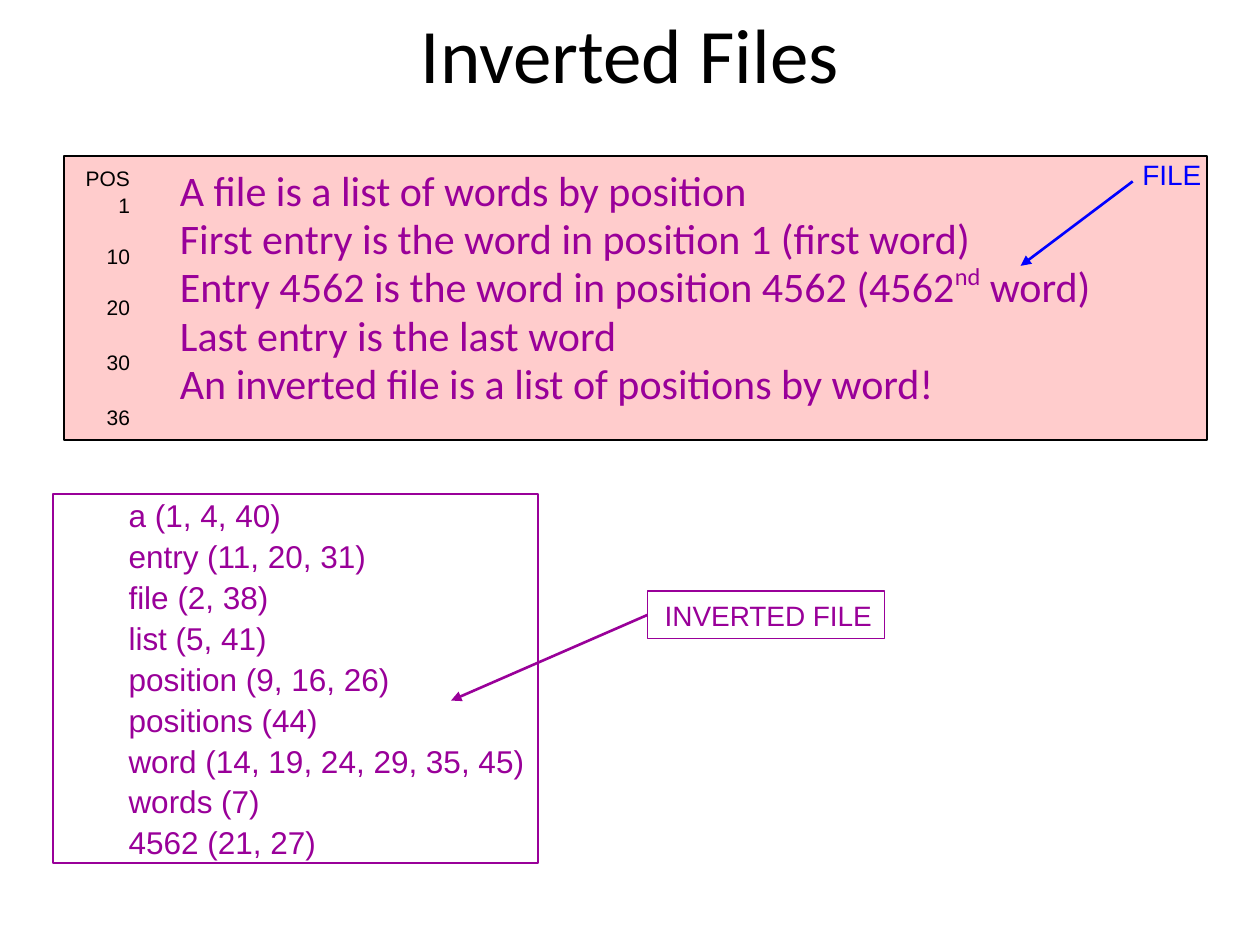
import pptx
import pptx.dml.color
import pptx.enum.shapes
import pptx.enum.text
import pptx.oxml.ns
import pptx.util
from lxml import etree
from pptx.util import Inches

BLACK = pptx.dml.color.RGBColor(0x00, 0x00, 0x00)
PINK = pptx.dml.color.RGBColor(0xFF, 0xCC, 0xCC)
PURPLE = pptx.dml.color.RGBColor(0x99, 0x00, 0x99)
BLUE = pptx.dml.color.RGBColor(0x00, 0x00, 0xFF)

ALIGN = pptx.enum.text.PP_ALIGN
ANCHOR = pptx.enum.text.MSO_ANCHOR


class SlideBuilder:
    """Holds the fonts and the current slide."""

    heading_font = "Calibri"
    label_font = "Arial"

    def __init__(self, slide):
        self.slide = slide

    def rectangle(self, left, top, width, height, line, weight=1, fill=None):
        shape = self.slide.shapes.add_shape(
            pptx.enum.shapes.MSO_SHAPE.RECTANGLE,
            Inches(left), Inches(top), Inches(width), Inches(height))
        shape.shadow.inherit = False
        if fill is None:
            shape.fill.background()
        else:
            shape.fill.solid()
            shape.fill.fore_color.rgb = fill
        shape.line.color.rgb = line
        shape.line.width = pptx.util.Pt(weight)
        return shape

    def text_box(self, left, top, width, height):
        return self.slide.shapes.add_textbox(
            Inches(left), Inches(top), Inches(width), Inches(height))

    def set_lines(self, shape, lines, size, color, font=label_font, align=ALIGN.LEFT,
                  anchor=ANCHOR.MIDDLE, wrap=False, before=0, after=0, spacing=None):
        """Each line is a list of runs or one string."""
        frame = shape.text_frame
        frame.word_wrap = wrap
        frame.vertical_anchor = anchor
        for index, line in enumerate(lines):
            paragraph = frame.add_paragraph() if index else frame.paragraphs[0]
            paragraph.alignment = align
            paragraph.space_before = pptx.util.Pt(before)
            paragraph.space_after = pptx.util.Pt(after)
            paragraph.line_spacing = spacing
            for text in [line] if isinstance(line, str) else line:
                run = paragraph.add_run()
                run.text = text
                run.font.name = font
                run.font.size = pptx.util.Pt(size)
                run.font.color.rgb = color
        return frame.paragraphs

    def arrow(self, start, end, color):
        connector = self.slide.shapes.add_connector(
            pptx.enum.shapes.MSO_CONNECTOR.STRAIGHT,
            *(Inches(value) for value in start + end))
        connector.line.color.rgb = color
        connector.line.width = pptx.util.Pt(1.5)
        qn = pptx.oxml.ns.qn
        etree.SubElement(connector.line._get_or_add_ln(), qn("a:tailEnd"), type="triangle")
        etree.SubElement(connector._element.spPr, qn("a:effectLst"))
        return connector


def main():
    presentation = pptx.Presentation()
    presentation.slide_width = Inches(10)
    presentation.slide_height = Inches(7.5)
    builder = SlideBuilder(presentation.slides.add_slide(presentation.slide_layouts[6]))

    # File panel and title
    builder.rectangle(0.51, 1.24, 9.07, 2.25, BLACK, fill=PINK)
    builder.set_lines(builder.text_box(0.75, 0, 8.5, 0.83), ["Inverted Files"], 44, BLACK,
                      font=builder.heading_font, align=ALIGN.CENTER, wrap=True)

    # File contents
    sentences = [
        "A file is a list of words by position",
        "First entry is the word in position 1 (first word)",
        ["Entry 4562 is the word in position 4562 (4562", "nd", " word)"],
        "Last entry is the last word",
        "An inverted file is a list of positions by word!",
    ]
    paragraphs = builder.set_lines(
        builder.text_box(1.33, 1.33, 8.67, 2.12), sentences, 24, PURPLE,
        font=builder.heading_font, anchor=ANCHOR.TOP, wrap=True, before=4.6, spacing=0.8)
    ordinal = paragraphs[2].runs[1]
    ordinal._r.get_or_add_rPr().set("baseline", "40000")

    # Position labels, each with the gap above it
    gaps = {"POS": 0, "1": 0, "10": 13.8, "20": 13.8, "30": 16, "36": 16}
    paragraphs = builder.set_lines(builder.text_box(0.58, 1.28, 0.55, 2.16), gaps, 12, BLACK,
                                   align=ALIGN.RIGHT, after=1)
    for paragraph, gap in zip(paragraphs, gaps.values()):
        paragraph.space_before = pptx.util.Pt(gap)

    # File label
    builder.set_lines(builder.text_box(8.96, 1.2, 0.68, 0.37), ["FILE"], 16, BLUE,
                      align=ALIGN.CENTER)
    builder.arrow((8.99, 1.44), (8.1, 2.11), BLUE)

    # Inverted file: word and its positions
    index_entries = {
        "a": "1, 4, 40",
        "entry": "11, 20, 31",
        "file": "2, 38",
        "list": "5, 41",
        "position": "9, 16, 26",
        "positions": "44",
        "word": "14, 19, 24, 29, 35, 45",
        "words": "7",
        "4562": "21, 27",
    }
    index_box = builder.rectangle(0.42, 3.92, 3.85, 2.93, PURPLE)
    index_box.text_frame.margin_left = Inches(0.6)
    builder.set_lines(index_box,
                      [f"{word} ({places})" for word, places in index_entries.items()],
                      18, PURPLE, before=1.8)

    # Inverted file label
    label = builder.rectangle(5.14, 4.69, 1.88, 0.38, PURPLE, weight=0.75)
    builder.set_lines(label, ["INVERTED FILE"], 16, PURPLE, align=ALIGN.RIGHT)
    builder.arrow((5.14, 4.88), (3.58, 5.56), PURPLE).begin_connect(label, 1)

    presentation.save("out.pptx")


if __name__ == "__main__":
    main()
